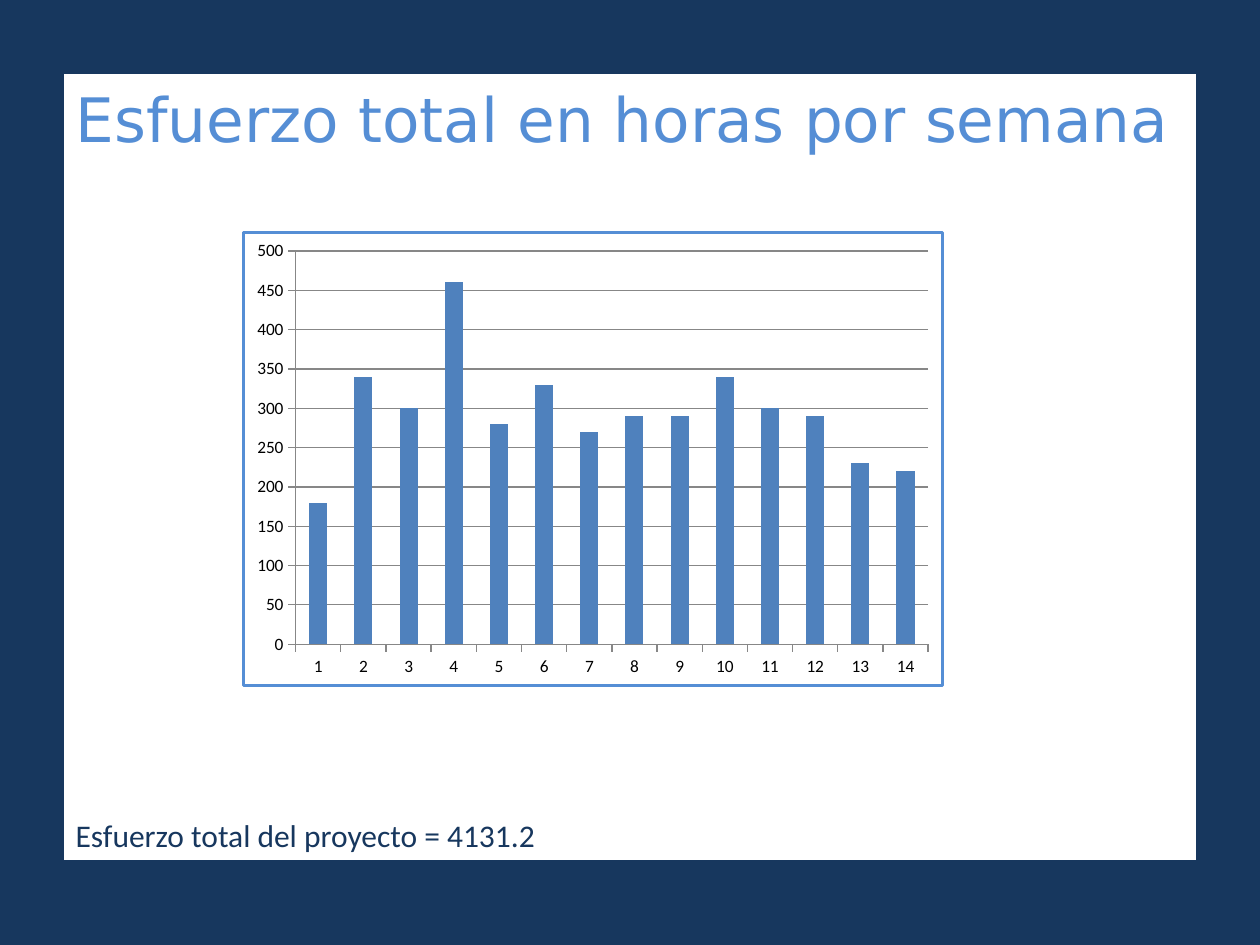
from lxml import etree
from pptx import Presentation
from pptx.chart.data import CategoryChartData
from pptx.dml.color import RGBColor
from pptx.enum.chart import XL_CHART_TYPE, XL_TICK_MARK
from pptx.enum.text import MSO_ANCHOR, MSO_AUTO_SIZE, PP_ALIGN
from pptx.oxml import parse_xml
from pptx.oxml.ns import nsdecls
from pptx.util import Pt

NAVY = "17375E"
SKY = "558ED5"
BAR_BLUE = "4F81BD"
GRID_GRAY = "878787"
WHITE = "FFFFFF"
BLACK = "000000"
WEEKLY_HOURS = [180, 340, 300, 460, 280, 330, 270, 290, 290, 340, 300, 290, 230, 220]


def set_color(color_format, value):
    color_format.rgb = RGBColor.from_string(value)


def set_fill(fill, value):
    fill.solid()
    set_color(fill.fore_color, value)


def set_line(line, value, width):
    set_fill(line.fill, value)
    line.width = Pt(width)


def set_font(font, name, size, color):
    font.name = name
    font.size = Pt(size)
    set_color(font.color, color)


def write_paragraph(paragraph, text, font_name, size, color, space_before=0):
    paragraph.text = text
    paragraph.alignment = PP_ALIGN.LEFT
    paragraph.space_before = Pt(space_before)
    set_font(paragraph.font, font_name, size, color)


def fill_title_panel(title):
    title.left, title.top = Pt(36), Pt(41.76)
    title.width, title.height = Pt(648), Pt(450)
    set_fill(title.fill, WHITE)
    set_line(title.line, NAVY, 0.75)
    frame = title.text_frame
    frame.word_wrap = True
    frame.auto_size = MSO_AUTO_SIZE.NONE
    frame.vertical_anchor = MSO_ANCHOR.BOTTOM
    write_paragraph(frame.paragraphs[0], "Esfuerzo total en horas por semana",
                    "DejaVu Sans", 35, SKY)
    write_paragraph(frame.add_paragraph(), "Esfuerzo total del proyecto = 4131.2",
                    "Calibri", 18, NAVY, space_before=378)


def set_chart_border(chart, color, width):
    border = parse_xml(
        f'<c:spPr {nsdecls("c", "a")}><a:solidFill><a:srgbClr val="{WHITE}"/></a:solidFill>'
        f'<a:ln w="{Pt(width)}"><a:solidFill><a:srgbClr val="{color}"/></a:solidFill></a:ln>'
        '</c:spPr>')
    chart.element.chart.addnext(border)


def style_axis(axis):
    axis.major_tick_mark = XL_TICK_MARK.OUTSIDE
    axis.minor_tick_mark = XL_TICK_MARK.NONE
    set_line(axis.format.line, GRID_GRAY, 0.75)


def add_hours_chart(slide):
    chart_data = CategoryChartData()
    chart_data.categories = [str(week) for week in range(1, len(WEEKLY_HOURS) + 1)]
    chart_data.add_series("Series 1", WEEKLY_HOURS)
    chart = slide.shapes.add_chart(XL_CHART_TYPE.COLUMN_CLUSTERED, Pt(138.24), Pt(131.76),
                                   Pt(401), Pt(260.64), chart_data).chart
    chart.has_title = False
    chart.has_legend = False
    set_font(chart.font, "Calibri", 10, BLACK)
    set_chart_border(chart, SKY, 1.75)

    style_axis(chart.category_axis)
    value_axis = chart.value_axis
    style_axis(value_axis)
    value_axis.minimum_scale = 0
    value_axis.maximum_scale = 500
    value_axis.major_unit = 50
    value_axis.has_major_gridlines = True
    set_line(value_axis.major_gridlines.format.line, GRID_GRAY, 0.75)

    plot = chart.plots[0]
    plot.gap_width = 150
    plot.vary_by_categories = False
    set_fill(plot.series[0].format.fill, BAR_BLUE)


def main():
    presentation = Presentation()
    presentation.slide_width, presentation.slide_height = Pt(720), Pt(540)
    slide = presentation.slides.add_slide(presentation.slide_layouts[5])
    set_fill(slide.background.fill, NAVY)
    fill_title_panel(slide.shapes.title)
    add_hours_chart(slide)
    presentation.save("out.pptx")


if __name__ == "__main__":
    main()
